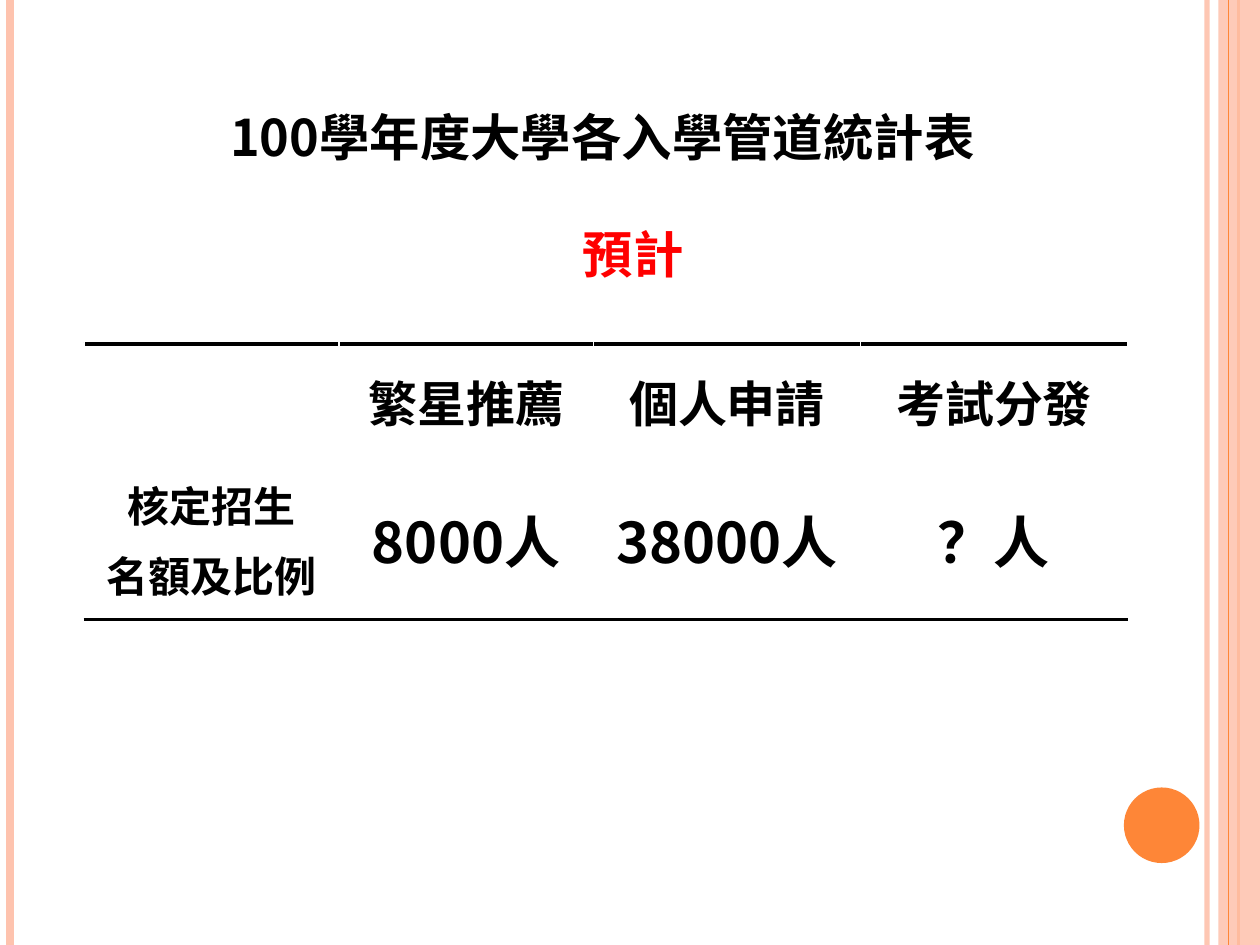
from lxml import etree
from pptx import Presentation
from pptx import util as u
from pptx.dml.color import RGBColor
from pptx.enum import shapes, text
from pptx.oxml import ns

FONT = "Noto Sans CJK SC"
COLORS = {"black": "000000", "white": "FFFFFF", "red": "FF0000",
          "peach": "FEC3AE", "orange": "FE8637"}

# Rows of (size, text) cells; a line break starts a new paragraph
TABLE = [
    [(28, ""), (28, "繁星推薦"), (28, "個人申請"), (28, "考試分發")],
    [(24, "核定招生\n名額及比例"), (32, "8000人"), (32, "38000人"), (32, "？人")],
]
COL_WIDTHS = [2.02, 2.02, 2.12, 2.12]
ROW_HEIGHTS = [0.91, 1.28]


def rgb(name):
    return RGBColor.from_string(COLORS[name])


def set_alpha(fill_parent, percent):
    clr = fill_parent.find(".//" + ns.qn("a:srgbClr"))
    etree.SubElement(clr, ns.qn("a:alpha"), val=str(percent * 1000))


def write(p, words, size, color="black", small_caps=False):
    p.alignment = text.PP_ALIGN.CENTER
    r = p.add_run()
    r.text = words
    r.font.size = u.Pt(size)
    r.font.bold = True
    r.font.name = FONT
    r.font.color.rgb = rgb(color)
    rPr = r._r.get_or_add_rPr()
    etree.SubElement(rPr, ns.qn("a:ea"), typeface=FONT)
    if small_caps:
        rPr.set("cap", "small")


def write_heading(sp, words, color, anchor):
    tf = sp.text_frame
    tf.word_wrap = True
    tf.auto_size = text.MSO_AUTO_SIZE.SHAPE_TO_FIT_TEXT
    tf.vertical_anchor = anchor
    p = tf.paragraphs[0]
    write(p, words, 36, color, small_caps=True)
    pPr = p._p.get_or_add_pPr()
    pPr.set("marL", "0")
    pPr.set("indent", str(u.Inches(0.37)))


def add_stripe(s, x, color, width, alpha=None):
    line = s.shapes.add_connector(shapes.MSO_CONNECTOR.STRAIGHT,
                                  u.Inches(x), 0, u.Inches(x), u.Inches(7.5))
    line.line.color.rgb = rgb(color)
    line.line.width = u.Pt(width)
    spPr = line._element.spPr
    etree.SubElement(spPr, ns.qn("a:effectLst"))
    if alpha:
        set_alpha(spPr, alpha)


def add_block(s, kind, box, color):
    sp = s.shapes.add_shape(kind, *map(u.Inches, box))
    sp.shadow.inherit = False
    sp.fill.solid()
    sp.fill.fore_color.rgb = rgb(color)
    sp.line.fill.background()
    return sp


def add_border(cell, side):
    ln = etree.Element(ns.qn("a:" + side), w=str(u.Pt(2)))
    fill = etree.SubElement(ln, ns.qn("a:solidFill"))
    etree.SubElement(fill, ns.qn("a:srgbClr"), val=COLORS["black"])
    cell._tc.get_or_add_tcPr().insert(0, ln)


def add_admissions_table(s):
    frame = s.shapes.add_table(len(TABLE), len(COL_WIDTHS), u.Inches(0.67), u.Inches(2.73),
                               u.Inches(sum(COL_WIDTHS)), u.Inches(sum(ROW_HEIGHTS)))
    table = frame.table
    table.first_row = table.horz_banding = False
    for col, width in zip(table.columns, COL_WIDTHS):
        col.width = u.Inches(width)
    for row, height, entries, side in zip(table.rows, ROW_HEIGHTS, TABLE, ("lnT", "lnB")):
        row.height = u.Inches(height)
        for cell, (size, words) in zip(row.cells, entries):
            cell.fill.solid()
            cell.fill.fore_color.rgb = rgb("white")
            cell.vertical_anchor = text.MSO_ANCHOR.MIDDLE
            add_border(cell, side)
            tf = cell.text_frame
            for i, line in enumerate(words.splitlines()):
                p = tf.add_paragraph() if i else tf.paragraphs[0]
                p.space_before = u.Pt(size * 0.2)
                write(p, line, size)


def main():
    prs = Presentation()
    prs.slide_width, prs.slide_height = u.Inches(10), u.Inches(7.5)
    s = prs.slides.add_slide(prs.slide_layouts[5])

    # Side stripes and corner dot
    add_stripe(s, 9.58, "peach", 3, alpha=93)
    add_stripe(s, 0.08, "peach", 4.5)
    add_stripe(s, 9.83, "orange", 1.5)
    band = add_block(s, shapes.MSO_SHAPE.RECTANGLE, (9.67, 0, 0.33, 7.5), "peach")
    set_alpha(band._element.spPr, 87)
    add_stripe(s, 9.75, "orange", 0.75)
    add_block(s, shapes.MSO_SHAPE.OVAL, (8.92, 6.25, 0.6, 0.6), "orange")

    # Title and subtitle
    title = s.shapes.title
    title.left, title.top, title.width, title.height = map(u.Inches, (0.51, 0.68, 8.17, 0.71))
    write_heading(title, "100學年度大學各入學管道統計表", "black", text.MSO_ANCHOR.BOTTOM)

    add_admissions_table(s)

    subtitle = s.shapes.add_textbox(*map(u.Inches, (3.66, 1.62, 2.36, 0.71)))
    write_heading(subtitle, "預計", "red", text.MSO_ANCHOR.TOP)

    prs.save("out.pptx")


if __name__ == "__main__":
    main()
